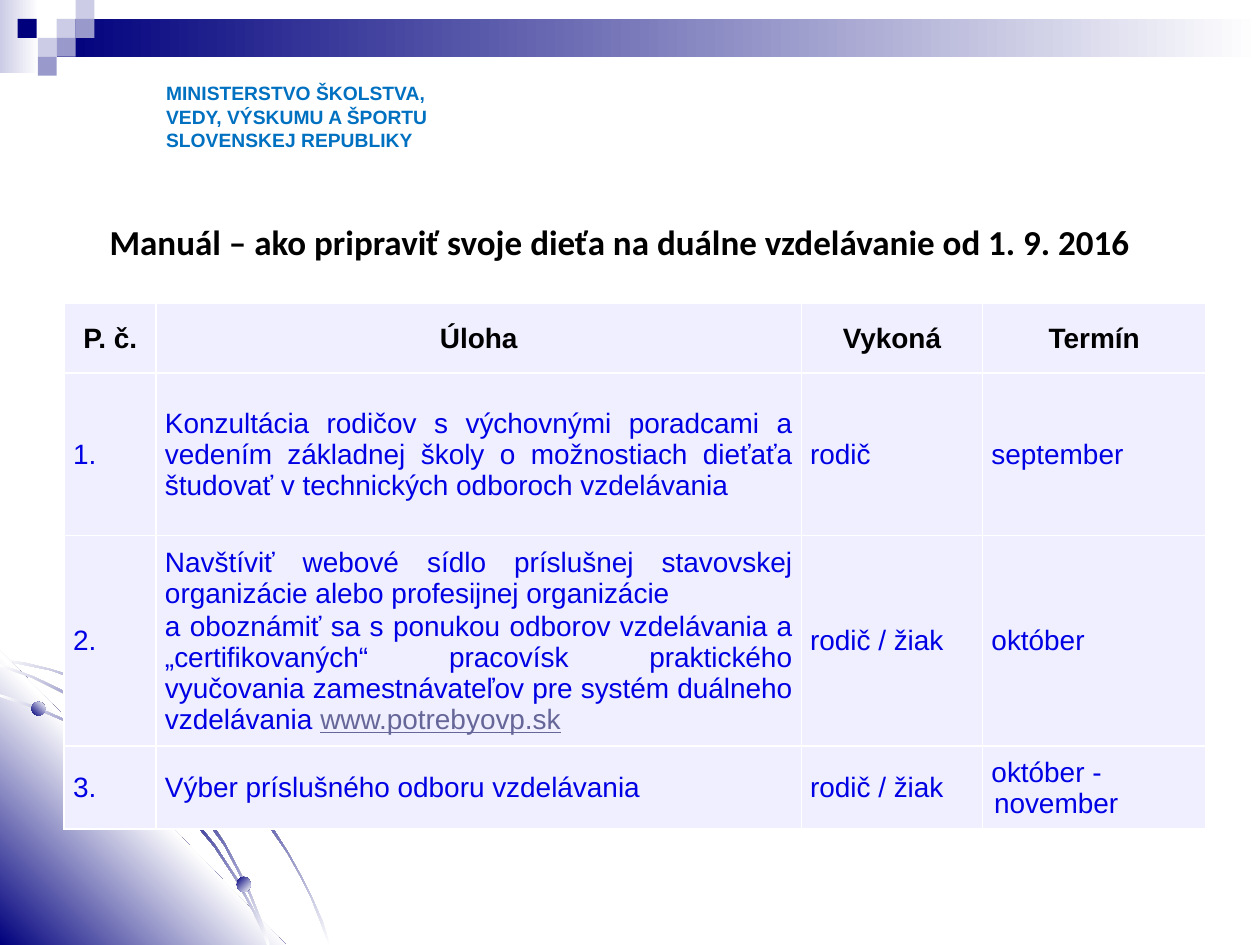
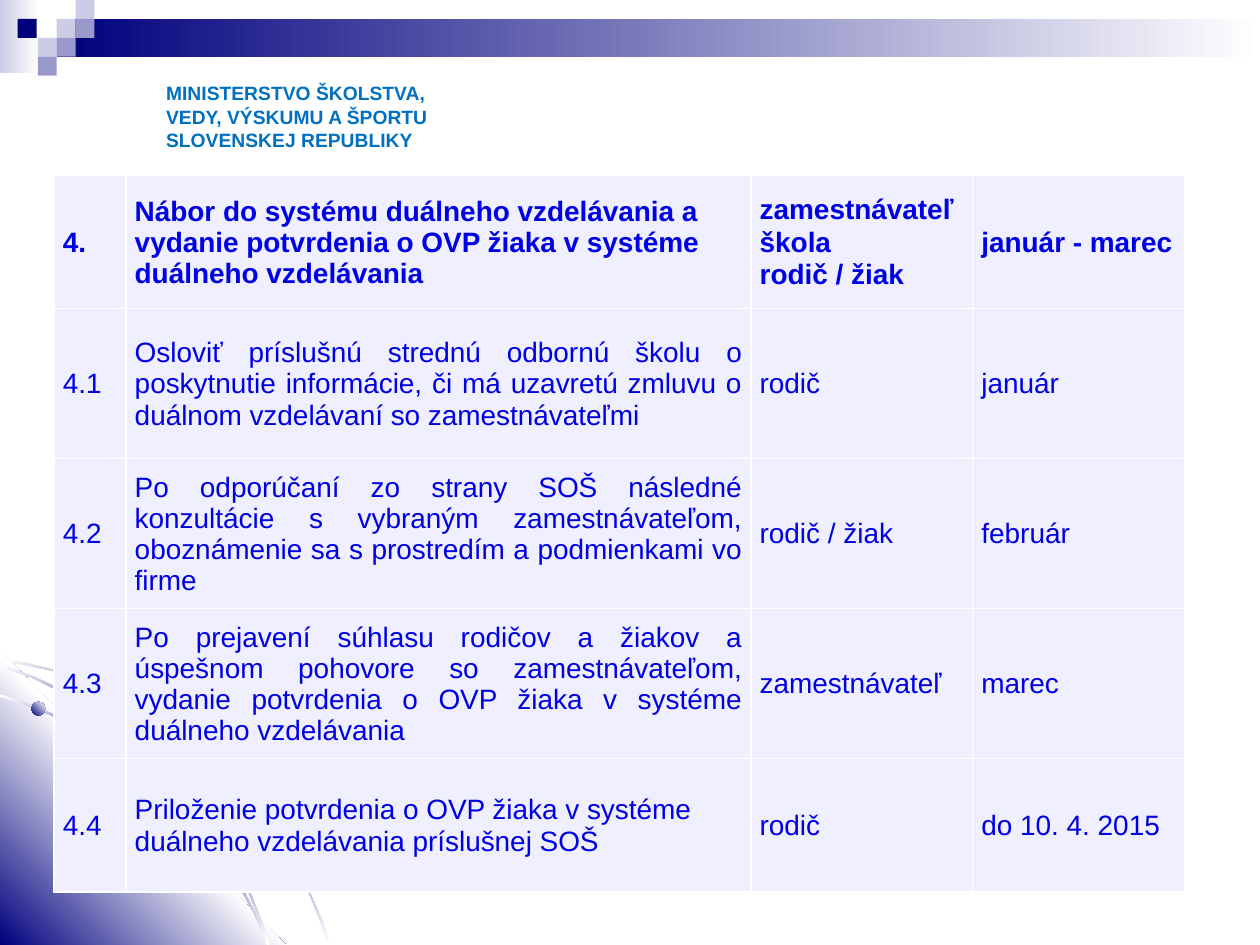
from lxml import etree
from pptx import Presentation
from pptx.dml.color import RGBColor
from pptx.enum.shapes import MSO_SHAPE as SHAPE
from pptx.enum.text import MSO_ANCHOR as ANCHOR, PP_ALIGN as ALIGN
from pptx.oxml import parse_xml
from pptx.oxml.ns import nsdecls, qn
from pptx.util import Inches, Pt

NAVY = RGBColor(0x00, 0x00, 0x7D)
VIOLET = RGBColor(0x99, 0x99, 0xCC)
PALE = RGBColor(0xCC, 0xCC, 0xE6)
WHITE = RGBColor(0xFF, 0xFF, 0xFF)
BLACK = RGBColor(0x00, 0x00, 0x00)
MINISTRY_BLUE = RGBColor(0x00, 0x70, 0xC0)
CELL_FILL = RGBColor(0xEF, 0xEF, 0xFF)
CELL_TEXT = RGBColor(0x00, 0x00, 0xE4)
LINK = RGBColor(0x66, 0x66, 0x99)

# Header band and mosaic: left, top, width, height, colour(s)
BANDS = [(0, 0, 0.31, 0.58, [PALE, WHITE]), (0.45, 0.15, 9.55, 0.3, [NAVY, WHITE])]
TILES = [(0.45, 0.15, PALE), (0.6, 0, PALE), (0.6, 0.15, VIOLET), (0.3, 0.3, PALE),
         (0.14, 0.15, NAVY), (0.45, 0.3, VIOLET), (0.3, 0.45, VIOLET)]

# Corner ornament: outlines, then the beads on them
OUTER_ARC = [
    (0.4, 5.31), (0.2, 5.26), (0, 5.23), (0, 5.24), (0.2, 5.28), (0.4, 5.32),
    (0.68, 5.42), (0.95, 5.53), (1.22, 5.69), (1.47, 5.86), (1.7, 6.05), (1.91, 6.27),
    (2.1, 6.51), (2.28, 6.77), (2.38, 6.95), (2.47, 7.13), (2.54, 7.31), (2.61, 7.5),
    (2.62, 7.5), (2.56, 7.31), (2.48, 7.13), (2.39, 6.95), (2.29, 6.77), (2.12, 6.5),
    (1.92, 6.26), (1.7, 6.04), (1.48, 5.84), (1.23, 5.67), (0.96, 5.53), (0.69, 5.4)]
CORNER = [(2.27, 7.5), (0, 7.5), (0, 5.16)]
INNER_ARC = [
    (2.01, 7.24), (2.07, 7.37), (2.12, 7.5), (2.14, 7.5), (2.09, 7.36), (2.02, 7.23),
    (1.88, 6.97), (1.71, 6.71), (1.51, 6.46), (1.3, 6.24), (1.07, 6.05), (0.82, 5.88),
    (0.56, 5.73), (0.29, 5.61), (0, 5.51), (0, 5.53), (0.27, 5.62), (0.55, 5.74),
    (0.81, 5.9), (1.06, 6.06), (1.29, 6.26), (1.5, 6.48), (1.7, 6.72), (1.87, 6.98)]
MIDDLE_ARC = [
    (0, 5.27), (0, 5.29), (0.26, 5.38), (0.52, 5.51), (0.77, 5.65), (1, 5.83),
    (1.22, 6.02), (1.43, 6.23), (1.6, 6.46), (1.78, 6.71), (1.88, 6.9), (1.98, 7.1),
    (2.06, 7.3), (2.12, 7.49), (2.14, 7.49), (2.07, 7.29), (1.99, 7.09), (1.89, 6.89),
    (1.79, 6.7), (1.62, 6.44), (1.44, 6.22), (1.23, 6), (1.01, 5.81), (0.79, 5.64),
    (0.54, 5.5), (0.27, 5.37)]
ARC_COLORS = [WHITE, NAVY, WHITE]
OUTLINES = [(OUTER_ARC, ARC_COLORS, 45), (CORNER, [NAVY, WHITE, NAVY], 315),
            (INNER_ARC, ARC_COLORS, 45), (MIDDLE_ARC, ARC_COLORS, 45)]
BEADS = [(0.25, 5.57, 0.11, 0.11, 315), (1.88, 6.96, 0.11, 0.12, 45),
         (0.97, 5.5, 0.15, 0.15, 315)]

MINISTRY = ["MINISTERSTVO ŠKOLSTVA,", "VEDY, VÝSKUMU A ŠPORTU", "SLOVENSKEJ REPUBLIKY"]
TITLE = "Manuál – ako pripraviť svoje dieťa na duálne vzdelávanie od 1. 9. 2016"
URL = "www.potrebyovp.sk"
HANGING = [0.59, 0, 0.59, 0.02]

# A line feed inside a cell starts a new paragraph
PREPARATION = [
    ["P. č.", "Úloha", "Vykoná", "Termín"],
    ["1.", "Konzultácia rodičov s výchovnými poradcami a vedením základnej školy "
     "o možnostiach dieťaťa študovať v technických odboroch vzdelávania",
     "rodič", "september"],
    ["2.", "Navštíviť webové sídlo príslušnej stavovskej organizácie alebo profesijnej "
     "organizácie\na oboznámiť sa s ponukou odborov vzdelávania a „certifikovaných“ "
     "pracovísk praktického vyučovania zamestnávateľov pre systém duálneho "
     "vzdelávania " + URL, "rodič / žiak", "október"],
    ["3.", "Výber príslušného odboru vzdelávania", "rodič / žiak", "október - november"],
]
RECRUITMENT = [
    ["4.", "Nábor do systému duálneho vzdelávania a vydanie potvrdenia o OVP žiaka "
     "v systéme duálneho vzdelávania",
     "zamestnávateľ\nškola\nrodič / žiak", "január - marec"],
    ["4.1", "Osloviť príslušnú strednú odbornú školu o poskytnutie informácie, či má "
     "uzavretú zmluvu o duálnom vzdelávaní so zamestnávateľmi", "rodič", "január"],
    ["4.2", "Po odporúčaní zo strany SOŠ následné konzultácie s vybraným "
     "zamestnávateľom, oboznámenie sa s prostredím a podmienkami vo firme",
     "rodič / žiak", "február"],
    ["4.3", "Po prejavení súhlasu rodičov a žiakov a úspešnom pohovore so "
     "zamestnávateľom, vydanie potvrdenia o OVP žiaka v systéme duálneho vzdelávania",
     "zamestnávateľ", "marec"],
    ["4.4", "Priloženie potvrdenia o OVP žiaka v systéme duálneho vzdelávania "
     "príslušnej SOŠ", "rodič", "do 10. 4. 2015"],
]
# title, table left and top, column widths, row heights, cells, rows with a justified task
SLIDES = [
    (TITLE, 0.51, 2.41, [0.73, 5.12, 1.44, 1.77], [0.55, 1.29, 1.67, 0.66],
     PREPARATION, [1, 2, 3]),
    (None, 0.43, 1.39, [0.57, 4.96, 1.76, 1.68], [1.06, 1.19, 1.19, 1.19, 1.06],
     RECRUITMENT, [1, 2, 3]),
]


def paint(sp, colors, angle=0):
    """Fill without outline or shadow; several colours make a linear gradient."""
    sp.shadow.inherit = False
    sp.line.fill.background()
    sp.fill.solid()
    sp.fill.fore_color.rgb = colors[0]
    if len(colors) > 1:
        stops = "".join(
            f'<a:gs pos="{i * 100000 // (len(colors) - 1)}"><a:srgbClr val="{c}"/></a:gs>'
            for i, c in enumerate(colors))
        solid = sp._element.spPr.find(qn("a:solidFill"))
        solid.getparent().replace(solid, parse_xml(
            f'<a:gradFill {nsdecls("a")} rotWithShape="1"><a:gsLst>{stops}</a:gsLst>'
            f'<a:lin ang="{angle * 60000}" scaled="0"/></a:gradFill>'))


def add_run(p, text, size, color, bold=False, font="Arial"):
    r = p.add_run()
    r.text = text
    r.font.name, r.font.size, r.font.bold = font, Pt(size), bold
    r.font.color.rgb = color
    return r


prs = Presentation()
prs.slide_width, prs.slide_height = Inches(10), Inches(7.5)

for title, left, top, widths, heights, rows, justified in SLIDES:
    s = prs.slides.add_slide(prs.slide_layouts[6])
    s.background.fill.solid()
    s.background.fill.fore_color.rgb = WHITE

    # Header band, mosaic and corner ornament
    header = s.shapes.add_group_shape().shapes
    blocks = BANDS + [(x, y, 0.15, 0.15, [color]) for x, y, color in TILES]
    for *box, colors in blocks:
        paint(header.add_shape(SHAPE.RECTANGLE, *map(Inches, box)), colors)
    ornament = s.shapes.add_group_shape().shapes
    for points, colors, angle in OUTLINES:
        start, *rest = [(Inches(x), Inches(y)) for x, y in points]
        builder = ornament.build_freeform(*start)
        builder.add_line_segments(rest, close=True)
        paint(builder.convert_to_shape(), colors, angle)
    for *box, angle in BEADS:
        paint(ornament.add_shape(SHAPE.OVAL, *map(Inches, box)), [NAVY, WHITE], angle)

    # Ministry name
    tf = s.shapes.add_textbox(Inches(1.22), Inches(0.6), Inches(2.44), Inches(0.66)).text_frame
    tf.word_wrap = True
    for i, line in enumerate(MINISTRY):
        p = tf.add_paragraph() if i else tf.paragraphs[0]
        add_run(p, line, 11, MINISTRY_BLUE, bold=True)

    # Task table
    table = s.shapes.add_table(len(rows), len(widths), Inches(left), Inches(top),
                               Inches(sum(widths)), Inches(sum(heights))).table
    table.first_row = table.horz_banding = False
    for column, width in zip(table.columns, widths):
        column.width = Inches(width)
    for row, height in zip(table.rows, heights):
        row.height = Inches(height)
    for i, row in enumerate(rows):
        for j, text in enumerate(row):
            cell = table.cell(i, j)
            cell.margin_left = cell.margin_right = Inches(0.07)
            cell.margin_top, cell.margin_bottom = Inches(0.01), 0
            cell.vertical_anchor = ANCHOR.MIDDLE
            tcPr = cell._tc.get_or_add_tcPr()
            for side in ("lnL", "lnR", "lnT", "lnB"):
                ln = etree.SubElement(tcPr, qn(f"a:{side}"), w=str(Pt(1)))
                fill = etree.SubElement(ln, qn("a:solidFill"))
                etree.SubElement(fill, qn("a:srgbClr"), val=str(WHITE))
            cell.fill.solid()
            cell.fill.fore_color.rgb = CELL_FILL

            is_header = rows is PREPARATION and i == 0
            color = BLACK if is_header else CELL_TEXT
            for k, line in enumerate(text.split("\n")):
                p = cell.text_frame.add_paragraph() if k else cell.text_frame.paragraphs[0]
                if k:
                    p.space_before = Pt(0.8)
                if is_header:
                    p.alignment = ALIGN.CENTER
                elif j == 1 and i in justified:
                    p.alignment = ALIGN.JUSTIFY
                else:
                    p.alignment = ALIGN.LEFT
                pPr = p._p.get_or_add_pPr()
                pPr.set("marL", str(Inches(HANGING[j])))
                pPr.set("indent", str(-Inches(HANGING[j])))
                before, link, _ = line.partition(URL)
                add_run(p, before, 16, color, bold=i == 0)
                if link:
                    add_run(p, link, 16, LINK).font.underline = True

    if title:
        tf = s.shapes.add_textbox(Inches(left), Inches(1.7), Inches(8.82), Inches(0.44)).text_frame
        tf.word_wrap = True
        p = tf.paragraphs[0]
        p.alignment = ALIGN.CENTER
        add_run(p, title, 20, BLACK, bold=True, font="Calibri")

prs.save("out.pptx")
